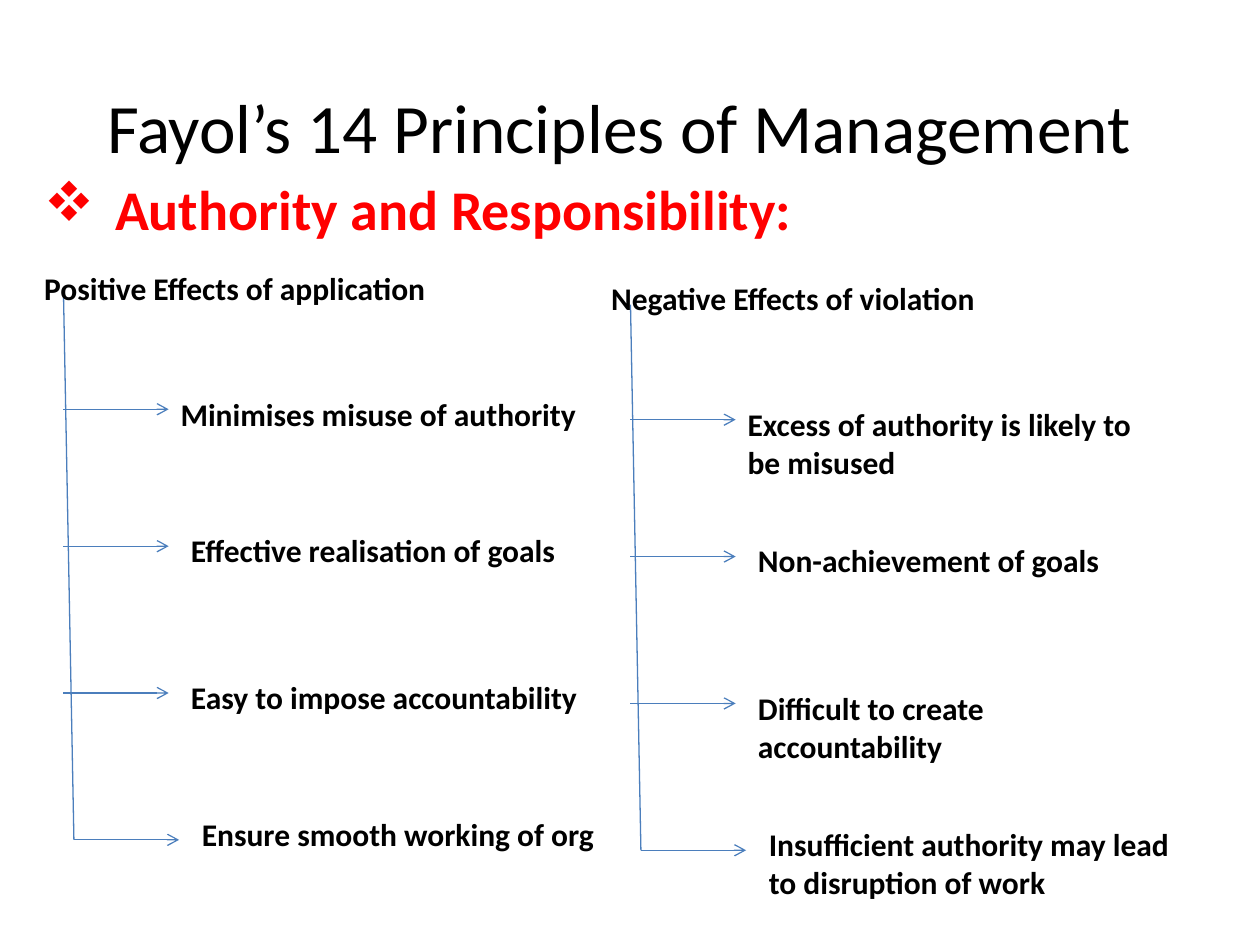
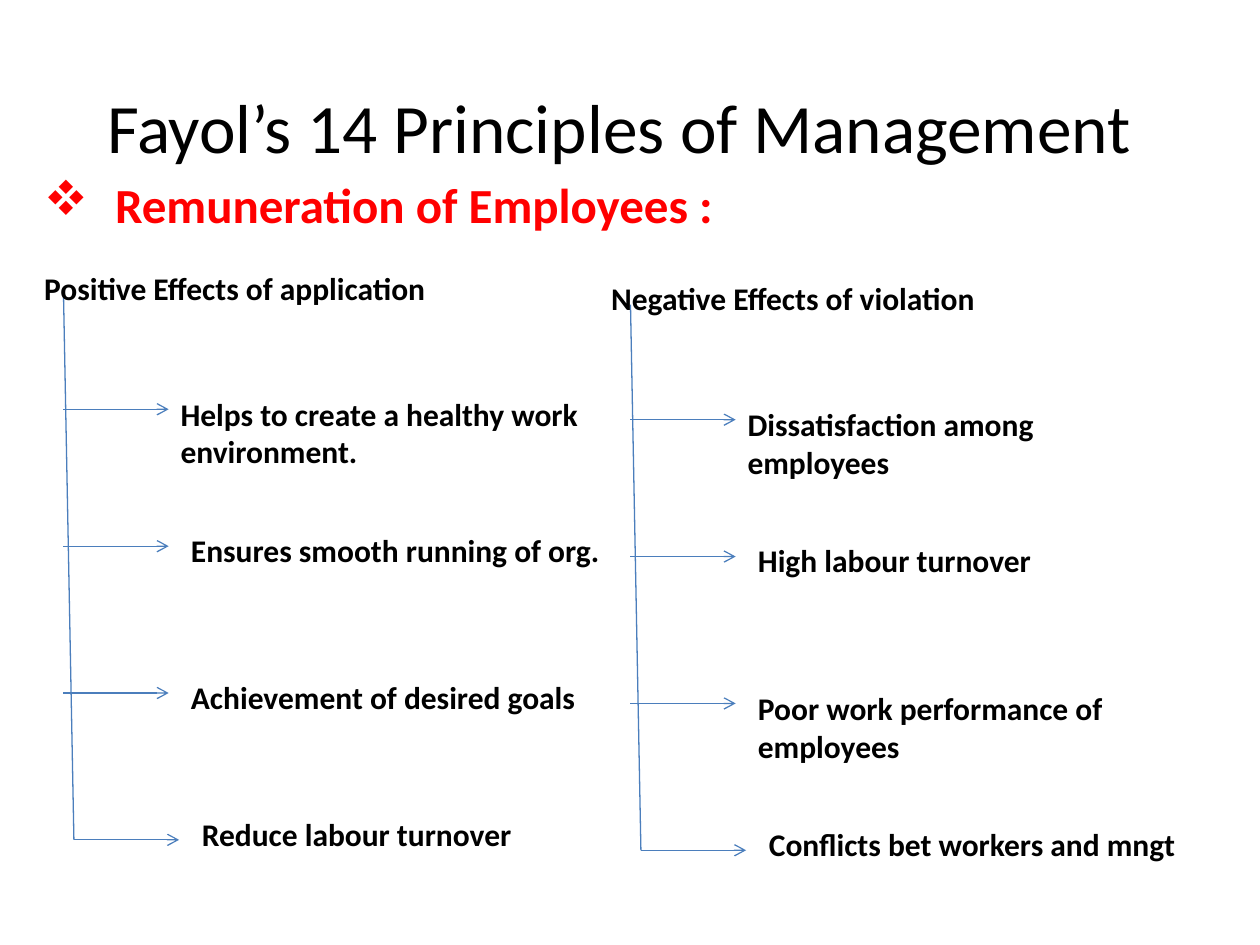
from dataclasses import dataclass

import lxml.etree
import pptx
import pptx.dml.color
import pptx.enum.shapes
import pptx.enum.text
import pptx.oxml.ns
import pptx.util

Cm, Pt = pptx.util.Cm, pptx.util.Pt
qn = pptx.oxml.ns.qn


@dataclass(frozen=True)
class Theme:
    font: str = "Calibri"
    ink: str = "000000"
    accent: str = "FF0000"
    line: str = "4B7EBC"
    title_size: float = 39.6
    label_size: float = 18
    line_width: float = 0.75


THEME = Theme()
TITLE = "Fayol’s 14 Principles of Management"
TITLE_BOX = (1.69, 1.48, 21.59, 2.12)
PRINCIPLE_BOX = (0.64, 3.39, 23.92, 14.82)
POSITIVE_BOX = (0.64, 5.29)
NEGATIVE_BOX = (12.07, 5.5)

# Effect tree, measured from the corner of its box
TRUNK_TOP = (0.64, 0.64)
TRUNK_FOOT = (0.85, 11.64)
BRANCH_LENGTH = 2.12
BRANCH_STARTS = [(0.64, 2.96), (0.64, 5.72), (0.64, 8.68), TRUNK_FOOT]
LABEL_CORNERS = [(2.75, 2.54), (2.96, 5.29), (2.96, 8.26), (3.18, 11.01)]
LABEL_WIDTH = 8.89
LABEL_HEIGHT = 1.03

PRINCIPLES = [
    (
        "Authority and Responsibility:",
        32,
        [
            "Minimises misuse of authority",
            "Effective realisation of goals",
            "Easy to impose accountability",
            "Ensure smooth working of org",
        ],
        [
            "Excess of authority is likely to be misused",
            "Non-achievement of goals",
            "Difficult to create accountability",
            "Insufficient authority may lead to disruption of work",
        ],
    ),
    (
        "Remuneration of Employees :",
        28,
        [
            "Helps to create a healthy work environment.",
            "Ensures smooth running of org.",
            "Achievement of desired goals",
            "Reduce labour turnover",
        ],
        [
            "Dissatisfaction among employees",
            "High labour turnover",
            "Poor work performance of employees",
            "Conflicts bet workers and mngt",
        ],
    ),
]


def write(frame, text, size, color, bold):
    frame.text = text
    frame.word_wrap = True
    paragraph = frame.paragraphs[0]
    font = paragraph.runs[0].font
    font.name = THEME.font
    font.size = Pt(size)
    font.bold = bold
    font.color.rgb = pptx.dml.color.RGBColor.from_string(color)
    return paragraph


def add_line(shapes, start, end, arrow=False):
    line = shapes.add_connector(
        pptx.enum.shapes.MSO_CONNECTOR.STRAIGHT, *map(Cm, start + end)
    )
    line.line.color.rgb = pptx.dml.color.RGBColor.from_string(THEME.line)
    line.line.width = Pt(THEME.line_width)
    if arrow:
        outline = line.line._get_or_add_ln()
        lxml.etree.SubElement(outline, qn("a:tailEnd"), type="arrow")
    lxml.etree.SubElement(line._element.spPr, qn("a:effectLst"))


def add_label(shapes, corner, text):
    label = shapes.add_textbox(*map(Cm, corner + (LABEL_WIDTH, LABEL_HEIGHT)))
    write(label.text_frame, text, THEME.label_size, THEME.ink, True)
    label.text_frame.auto_size = pptx.enum.text.MSO_AUTO_SIZE.SHAPE_TO_FIT_TEXT
    # Two-line labels take a second line of height
    if len(text) > 30:
        label.height = Cm(1.8)


def add_title(slide, box):
    title = slide.shapes.title
    title.left, title.top, title.width, title.height = map(Cm, box)
    paragraph = write(title.text_frame, TITLE, THEME.title_size, THEME.ink, False)
    paragraph.alignment = pptx.enum.text.PP_ALIGN.CENTER
    title.text_frame.vertical_anchor = pptx.enum.text.MSO_ANCHOR.MIDDLE


def add_principle(slide, box, name, size):
    """Add the bulleted name of the principle."""
    principle = slide.shapes.add_textbox(*map(Cm, box))
    paragraph = write(principle.text_frame, name, size, THEME.accent, True)
    paragraph.space_before = Pt(0.2 * size)
    properties = paragraph._p.get_or_add_pPr()
    properties.set("marL", str(Cm(1.43)))
    properties.set("indent", str(-Cm(1.43)))
    lxml.etree.SubElement(properties, qn("a:buFont"), typeface="Wingdings")
    lxml.etree.SubElement(properties, qn("a:buChar"), char="v")


def add_effect_tree(slide, box, heading, effects):
    """Add a heading with a trunk line and one arrow for each effect."""
    tree = slide.shapes.add_group_shape().shapes

    def place(point):
        return box[0] + point[0], box[1] + point[1]

    add_line(tree, place(TRUNK_TOP), place(TRUNK_FOOT))
    for x, y in BRANCH_STARTS:
        add_line(tree, place((x, y)), place((x + BRANCH_LENGTH, y)), arrow=True)
    add_label(tree, box, heading)
    for corner, effect in zip(LABEL_CORNERS, effects):
        add_label(tree, place(corner), effect)


def add_principle_slide(deck, name, size, positive, negative):
    slide = deck.slides.add_slide(deck.slide_layouts.get_by_name("Title Only"))
    add_title(slide, TITLE_BOX)
    add_principle(slide, PRINCIPLE_BOX, name, size)
    add_effect_tree(slide, NEGATIVE_BOX, "Negative Effects of violation", negative)
    add_effect_tree(slide, POSITIVE_BOX, "Positive Effects of application", positive)


def main():
    deck = pptx.Presentation()
    deck.slide_width, deck.slide_height = Cm(25.4), Cm(19.05)
    for principle in PRINCIPLES:
        add_principle_slide(deck, *principle)
    deck.save("out.pptx")


if __name__ == "__main__":
    main()
